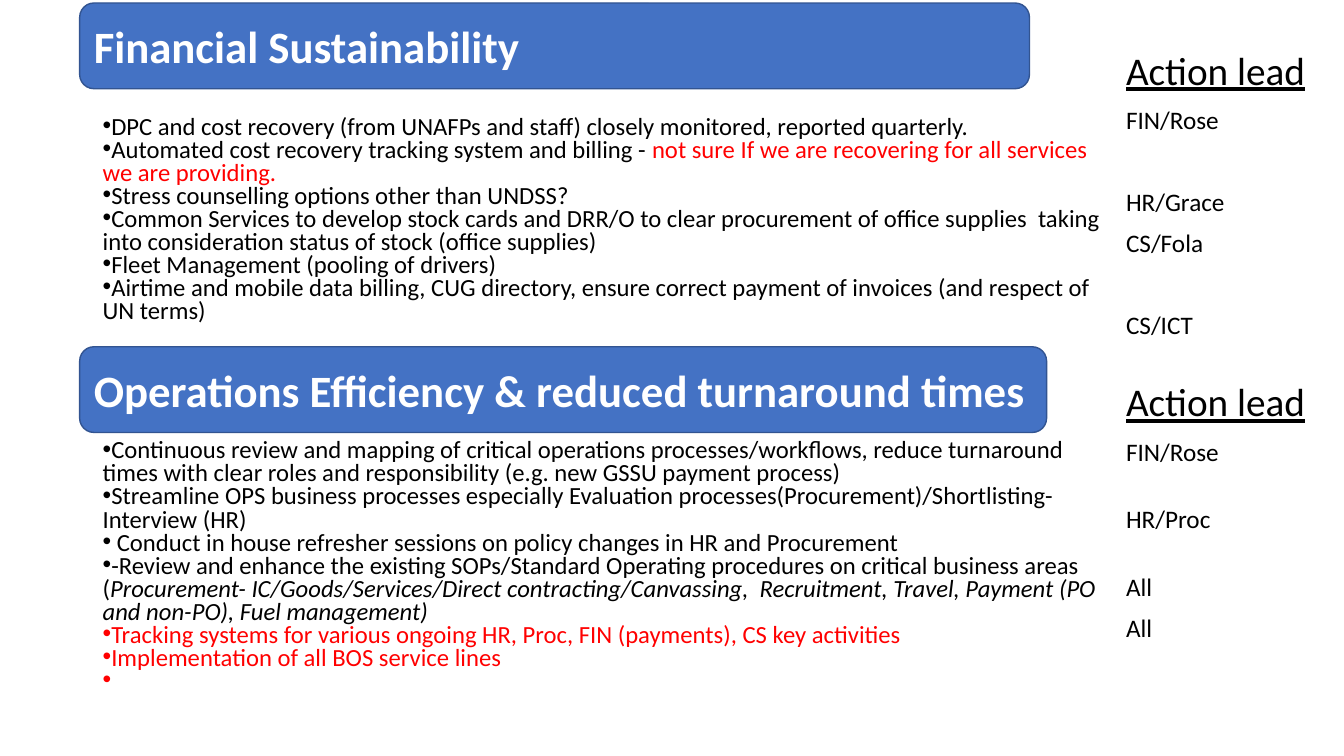
from dataclasses import dataclass

from lxml import etree
from pptx import Presentation
from pptx.dml.color import RGBColor
from pptx.enum import shapes, text
from pptx.oxml import ns
from pptx.util import Inches, Pt


@dataclass(frozen=True)
class Theme:
    """Colours, font and type sizes of the slide."""
    font: str = "Calibri"
    banner: str = "4472C4"
    banner_line: str = "325491"
    white: str = "FFFFFF"
    ink: str = "000000"
    alert: str = "FF0000"
    banner_size: float = 32
    lead_title_size: float = 28
    lead_size: float = 18
    action_size: float = 17.6


THEME = Theme()
ROW_GAP = 10
TALL_GAP = 29
WIDE_GAP = 39

FINANCE_ACTIONS = [
    [("DPC and cost recovery (from UNAFPs and staff) closely monitored, reported quarterly.", "")],
    [("Automated cost recovery tracking system and billing - ", ""),
     ("not sure If we are recovering for all services we are providing.", "alert")],
    [("Stress counselling options other than UNDSS?", "")],
    [("Common Services to develop stock cards and DRR/O to clear procurement of office supplies  "
      "taking into consideration status of stock (office supplies)", "")],
    [("Fleet Management (pooling of drivers)", "")],
    [("Airtime and mobile data billing, CUG directory, ensure correct payment of invoices "
      "(and respect of UN terms)", "")],
]
OPERATIONS_ACTIONS = [
    [("Continuous review and mapping of critical operations processes/workflows, reduce turnaround "
      "times with clear roles and responsibility (e.g. new GSSU payment process)", "")],
    [("Streamline OPS business processes especially Evaluation "
      "processes(Procurement)/Shortlisting-Interview (HR)", "")],
    [(" Conduct in house refresher sessions on policy changes in HR and Procurement", "")],
    [("-Review and enhance the existing SOPs/Standard Operating procedures on critical "
      "business areas (", ""),
     ("Procurement- IC/Goods/Services/Direct contracting/Canvassing,  Recruitment, Travel, "
      "Payment (PO and non-PO), Fuel management)", "italic")],
    [("Tracking systems for various ongoing HR, Proc, FIN (payments), CS key activities", "alert")],
    [("Implementation of all BOS service lines", "alert")],
    [(" ", "alert")],
]
FINANCE_LEADS = [("FIN/Rose", ROW_GAP), ("HR/Grace", WIDE_GAP), ("CS/Fola", ROW_GAP),
                 ("CS/ICT", WIDE_GAP)]
OPERATIONS_LEADS = [("FIN/Rose", ROW_GAP), ("HR/Proc", TALL_GAP), ("All", TALL_GAP),
                    ("All", ROW_GAP)]


def add_run(paragraph, wording, size, color=THEME.ink):
    """Add one run in the theme font and return its font."""
    run = paragraph.add_run()
    run.text = wording
    run.font.name = THEME.font
    run.font.size = Pt(size)
    run.font.color.rgb = RGBColor.from_string(color)
    return run.font


def add_frame(slide, box):
    """Add a wrapping text box and return its text frame."""
    frame = slide.shapes.add_textbox(*map(Inches, box)).text_frame
    frame.word_wrap = True
    return frame


def next_paragraph(frame):
    """Return the unused first paragraph, or a new one."""
    first = frame.paragraphs[0]
    return frame.add_paragraph() if first.runs else first


def set_bullet(paragraph):
    """Give a paragraph a round bullet directly before its text."""
    properties = paragraph._p.get_or_add_pPr()
    properties.set("marL", "0")
    properties.set("indent", str(-Inches(0.25)))
    etree.SubElement(properties, ns.qn("a:buFont")).set("typeface", "Arial")
    etree.SubElement(properties, ns.qn("a:buChar")).set("char", "•")


def add_banner(slide, box, heading):
    """Draw a rounded heading bar filling the box."""
    banner = slide.shapes.add_shape(shapes.MSO_SHAPE.ROUNDED_RECTANGLE, *map(Inches, box))
    banner.shadow.inherit = False
    banner.fill.solid()
    banner.fill.fore_color.rgb = RGBColor.from_string(THEME.banner)
    banner.line.color.rgb = RGBColor.from_string(THEME.banner_line)
    banner.line.width = Pt(1)
    frame = banner.text_frame
    frame.word_wrap = True
    frame.vertical_anchor = text.MSO_ANCHOR.MIDDLE
    paragraph = frame.paragraphs[0]
    paragraph.alignment = text.PP_ALIGN.LEFT
    add_run(paragraph, heading, THEME.banner_size, THEME.white).bold = True


def add_actions(slide, box, actions):
    """List the bulleted actions in the box."""
    frame = add_frame(slide, box)
    for action in actions:
        paragraph = next_paragraph(frame)
        paragraph.line_spacing = 0.785
        paragraph.space_before = Pt(0)
        set_bullet(paragraph)
        for wording, style in action:
            color = THEME.alert if style == "alert" else THEME.ink
            font = add_run(paragraph, wording, THEME.action_size, color)
            font.italic = style == "italic"


def add_leads(slide, box, leads):
    """List the action leads under their underlined heading."""
    frame = add_frame(slide, box)
    rows = [("Action lead", ROW_GAP, THEME.lead_title_size)]
    rows += [(lead, gap, THEME.lead_size) for lead, gap in leads]
    for wording, gap, size in rows:
        paragraph = next_paragraph(frame)
        paragraph.line_spacing = 0.9
        paragraph.space_before = Pt(gap)
        add_run(paragraph, wording, size).underline = size == THEME.lead_title_size


def add_section(slide, box, heading, banner_width, actions, actions_offset, leads, leads_offset):
    """Place a banner, its actions and its leads within the box."""
    left, top, width, height = box
    actions_width, leads_width = 10.16, 2.23
    add_banner(slide, (left, top, banner_width, 0.85), heading)
    add_actions(slide, (left + 0.13, top + actions_offset, actions_width,
                        height - actions_offset), actions)
    add_leads(slide, (left + width - leads_width, top + leads_offset, leads_width, 3.15), leads)


def main():
    """Build and save the slide."""
    deck = Presentation()
    deck.slide_width, deck.slide_height = Inches(13.33), Inches(7.5)
    slide = deck.slides.add_slide(deck.slide_layouts.get_by_name("Blank"))
    add_section(slide, (0.79, 0.03, 12.51, 3.4), "Financial Sustainability", 9.42,
                FINANCE_ACTIONS, 1.08, FINANCE_LEADS, 0.43)
    add_section(slide, (0.79, 3.44, 12.51, 3.6),
                "Operations Efficiency & reduced turnaround times", 9.59,
                OPERATIONS_ACTIONS, 0.88, OPERATIONS_LEADS, 0.31)
    deck.save("out.pptx")


if __name__ == "__main__":
    main()
